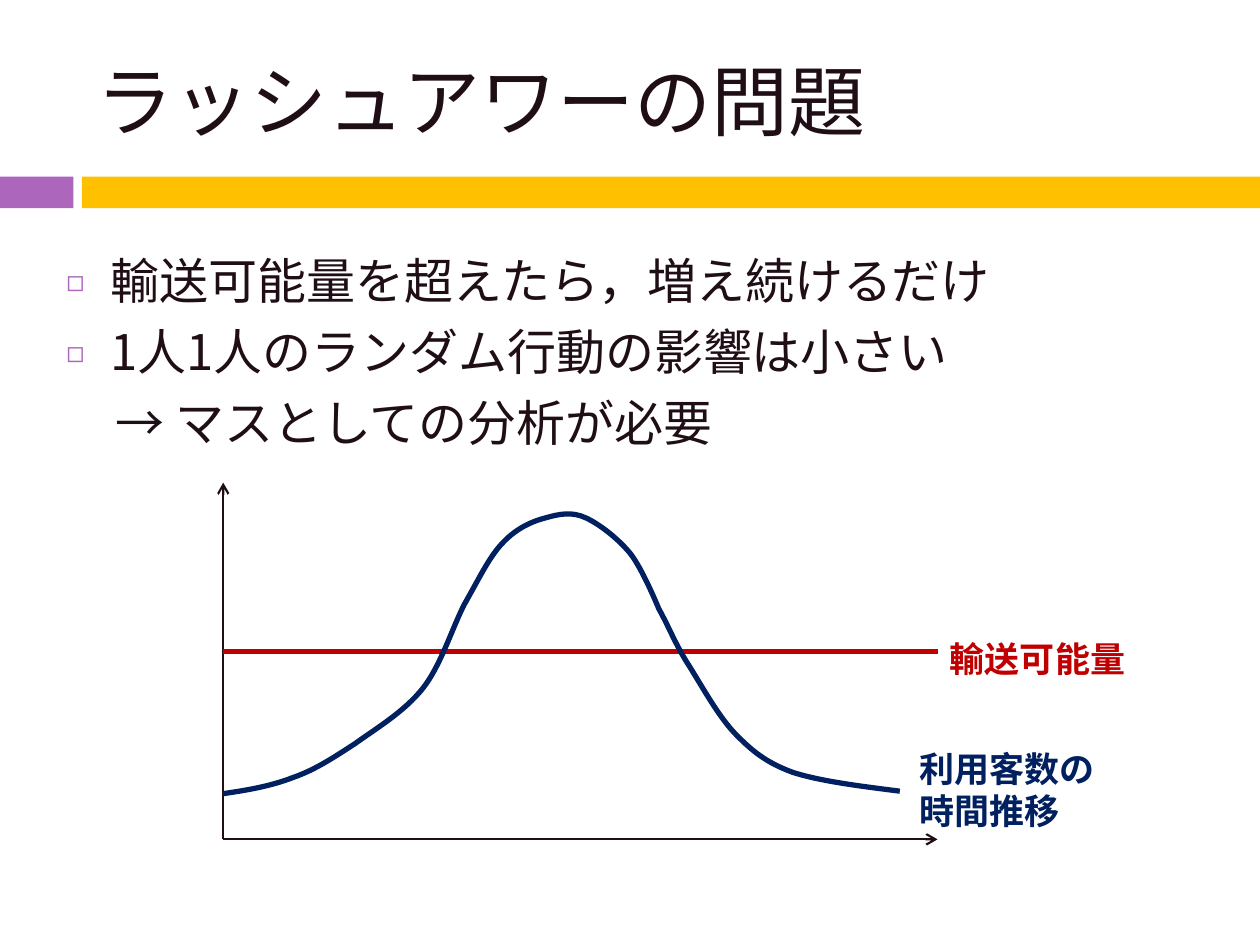
"""Build the rush hour slide: two remarks above a demand and capacity sketch."""
from lxml import etree
from pptx import Presentation
from pptx.dml.color import RGBColor
from pptx.enum.shapes import MSO_CONNECTOR, MSO_SHAPE
from pptx.enum.text import MSO_ANCHOR
from pptx.oxml.ns import qn
from pptx.util import Cm, Pt

RECT = MSO_SHAPE.RECTANGLE
LINE = MSO_CONNECTOR.STRAIGHT
TOP, MIDDLE = MSO_ANCHOR.TOP, MSO_ANCHOR.MIDDLE

FONT = "Noto Sans CJK JP"
HUES = {"ink": "200E17", "violet": "AC66BB", "gold": "FFC000",
        "red": "C00000", "navy": "002060"}

TITLE = "ラッシュアワーの問題"
BODY = [
    ("輸送可能量を超えたら，増え続けるだけ", True),
    ("1人1人のランダム行動の影響は小さい", True),
    ("→ マスとしての分析が必要", False),
]
BANDS = [(0, 1.48, "violet"), (1.65, 23.75, "gold")]
LEFT, RIGHT, BASE, PEAK, LIMIT = 4.5, 18.9, 16.92, 9.73, 13.13
LINES = [
    ((LEFT, BASE), (LEFT, PEAK), "ink", 1.25, True),
    ((LEFT, BASE), (RIGHT, BASE), "ink", 1.25, True),
    ((LEFT, LIMIT), (RIGHT, LIMIT), "red", 3, False),
]
START = (LEFT, 16)
CURVE = [
    ((4.98, 15.93), (5.46, 15.85), (5.92, 15.67)),
    ((6.35, 15.52), (6.73, 15.27), (7.16, 14.99)),
    ((7.59, 14.68), (8.15, 14.35), (8.53, 13.87)),
    ((8.89, 13.41), (9.12, 12.65), (9.37, 12.17)),
    ((9.65, 11.68), (9.86, 11.23), (10.13, 10.95)),
    ((10.39, 10.67), (10.69, 10.52), (11, 10.44)),
    ((11.28, 10.36), (11.53, 10.31), (11.81, 10.44)),
    ((12.09, 10.57), (12.45, 10.85), (12.7, 11.15)),
    ((12.95, 11.46), (13.28, 12.27), (13.28, 12.27)),
    ((13.49, 12.65), (13.59, 12.93), (13.84, 13.34)),
    ((14.1, 13.74), (14.45, 14.4), (14.81, 14.78)),
    ((15.16, 15.14), (15.44, 15.37), (15.98, 15.57)),
    ((16.54, 15.75), (17.35, 15.85), (18.14, 15.95)),
]
LABELS = [
    ("輸送可能量", (18.9, 12.73, 4.06, 1.12), "red", False),
    ("利用客数の時間推移", (18.29, 14.94, 4.19, 1.96), "navy", True),
]


def rgb(name):
    return RGBColor.from_string(HUES[name])


def add_text(frame, text, size=20, hue="ink", bold=False, first=True):
    para = frame.paragraphs[0] if first else frame.add_paragraph()
    run = para.add_run()
    run.text = text
    font = run.font
    font.size, font.bold, font.name = Pt(size), bold, FONT
    font.color.rgb = rgb(hue)
    etree.SubElement(font._element, qn("a:ea"), typeface=FONT)
    return para


def add_box(slide, place, wrap=True, anchor=TOP):
    frame = slide.shapes.add_textbox(*map(Cm, place)).text_frame
    frame.word_wrap, frame.vertical_anchor = wrap, anchor
    return frame


def set_list(para, mark):
    para.space_before = Pt(7)
    props = para._p.get_or_add_pPr()
    props.set("marL", str(Cm(0.89 if mark else 0.99)))
    props.set("indent", str(Cm(-0.89 if mark else 0)))
    if mark:
        tint = etree.SubElement(props, qn("a:buClr"))
        etree.SubElement(tint, qn("a:srgbClr"), val=HUES["violet"])
        etree.SubElement(props, qn("a:buSzPct"), val="60000")
        etree.SubElement(props, qn("a:buFont"), typeface=FONT)
        etree.SubElement(props, qn("a:buChar"), char="◻")


def add_line(slide, start, end, hue, width, arrow):
    link = slide.shapes.add_connector(LINE, *map(Cm, start + end))
    link.line.color.rgb, link.line.width = rgb(hue), Pt(width)
    if arrow:
        etree.SubElement(link.line._get_or_add_ln(), qn("a:tailEnd"), type="arrow")
    etree.SubElement(link._element.spPr, qn("a:effectLst"))


def add_curve(slide, start, parts, hue, width):
    pen = slide.shapes.build_freeform(*map(Cm, start))
    pen.add_line_segments([tuple(map(Cm, spot)) for part in parts for spot in part],
                          close=False)
    shape = pen.convert_to_shape()
    steps = list(shape._element.iter(qn("a:lnTo")))
    for i in range(0, len(steps), 3):
        bend = etree.Element(qn("a:cubicBezTo"))
        steps[i].addprevious(bend)
        for step in steps[i:i + 3]:
            bend.append(step[0])
            step.getparent().remove(step)
    shape.shadow.inherit = False
    shape.fill.background()
    shape.line.color.rgb, shape.line.width = rgb(hue), Pt(width)


def main():
    deck = Presentation()
    deck.slide_width, deck.slide_height = Cm(25.4), Cm(19.05)
    slide = deck.slides.add_slide(deck.slide_layouts[6])

    for left, width, hue in BANDS:
        band = slide.shapes.add_shape(RECT, Cm(left), Cm(3.56), Cm(width), Cm(0.64))
        band.shadow.inherit = False
        band.fill.solid()
        band.fill.fore_color.rgb = rgb(hue)
        band.line.fill.background()

    add_text(add_box(slide, (1.7, 0.64, 22.66, 2.74), anchor=MIDDLE), TITLE, size=44)
    frame = add_box(slide, (1.09, 4.93, 23.39, 13.21))
    for i, (text, mark) in enumerate(BODY):
        set_list(add_text(frame, text, size=28, first=i == 0), mark)

    for item in LINES:
        add_line(slide, *item)
    add_curve(slide, START, CURVE, "navy", 3)
    for text, place, hue, wrap in LABELS:
        add_text(add_box(slide, place, wrap=wrap), text, hue=hue, bold=True)

    deck.save("out.pptx")


if __name__ == "__main__":
    main()
